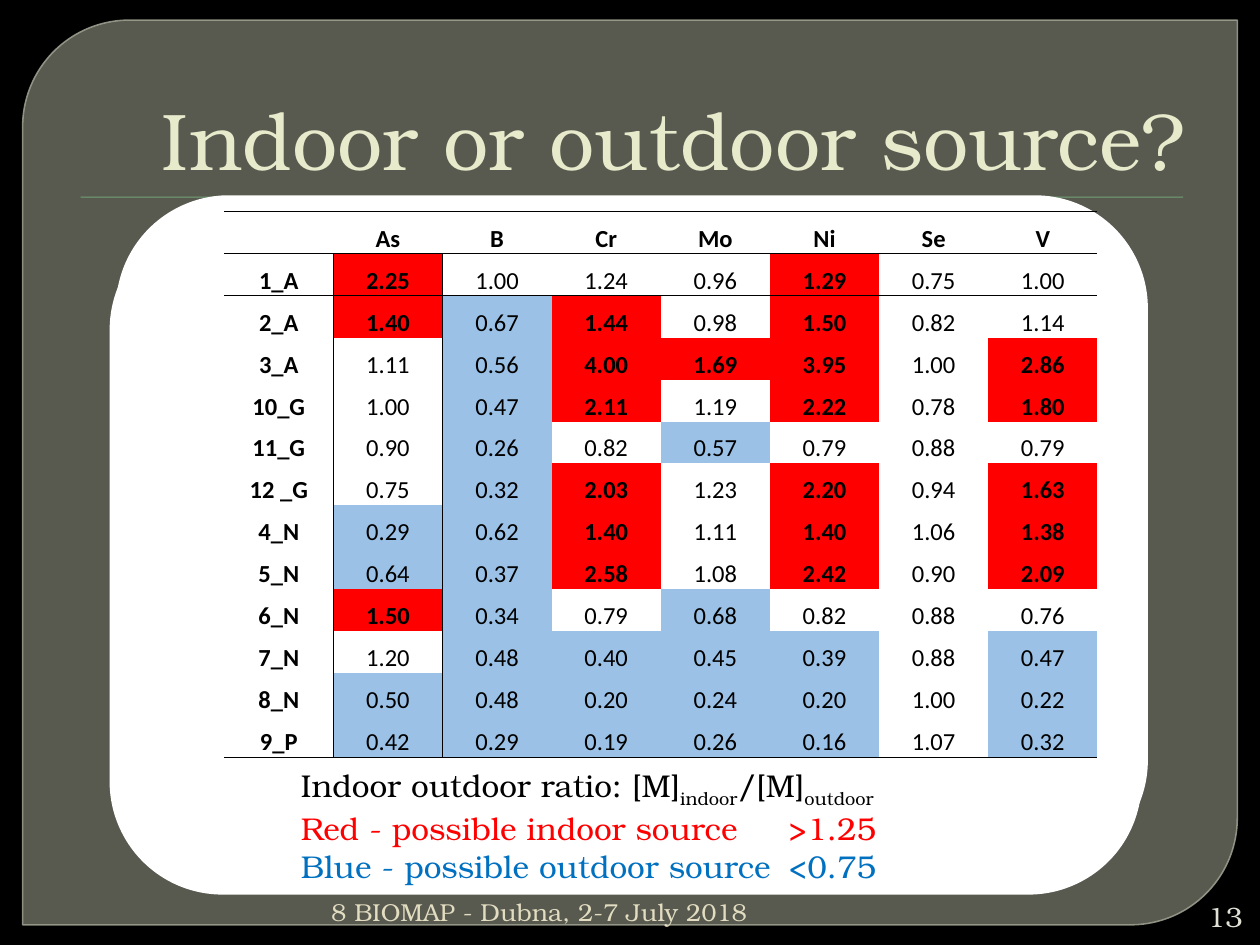
from lxml import etree
from pptx import Presentation
from pptx.dml.color import RGBColor
from pptx.enum.shapes import MSO_SHAPE as SHAPE
from pptx.enum.text import MSO_ANCHOR as ANCHOR, PP_ALIGN as ALIGN
from pptx.oxml.ns import qn
from pptx.util import Inches, Pt

BLACK = RGBColor(0x00, 0x00, 0x00)
WHITE = RGBColor(0xFF, 0xFF, 0xFF)
FRAME_FILL = RGBColor(0x88, 0x8B, 0x7B)
FRAME_LINE = RGBColor(0x9D, 0xA0, 0x90)
GREEN = RGBColor(0x72, 0xA3, 0x76)
CREAM = RGBColor(0xE7, 0xEA, 0xCB)
NUMBER_GREY = RGBColor(0xE0, 0xE0, 0xD4)
FOOTER_SAND = RGBColor(0xE2, 0xDC, 0xC1)
RED = RGBColor(0xFF, 0x00, 0x00)
LIGHT_BLUE = RGBColor(0x9B, 0xC2, 0xE6)
BLUE = RGBColor(0x00, 0x70, 0xC0)
SERIF = "TeX Gyre Bonum"
INDOOR_LIMIT, OUTDOOR_LIMIT = 1.25, 0.75

ELEMENTS = ["As", "B", "Cr", "Mo", "Ni", "Se", "V"]
RATIOS = {
    "1_A": [2.25, 1.00, 1.24, 0.96, 1.29, 0.75, 1.00],
    "2_A": [1.40, 0.67, 1.44, 0.98, 1.50, 0.82, 1.14],
    "3_A": [1.11, 0.56, 4.00, 1.69, 3.95, 1.00, 2.86],
    "10_G": [1.00, 0.47, 2.11, 1.19, 2.22, 0.78, 1.80],
    "11_G": [0.90, 0.26, 0.82, 0.57, 0.79, 0.88, 0.79],
    "12 _G": [0.75, 0.32, 2.03, 1.23, 2.20, 0.94, 1.63],
    "4_N": [0.29, 0.62, 1.40, 1.11, 1.40, 1.06, 1.38],
    "5_N": [0.64, 0.37, 2.58, 1.08, 2.42, 0.90, 2.09],
    "6_N": [1.50, 0.34, 0.79, 0.68, 0.82, 0.88, 0.76],
    "7_N": [1.20, 0.48, 0.40, 0.45, 0.39, 0.88, 0.47],
    "8_N": [0.50, 0.48, 0.20, 0.24, 0.20, 1.00, 0.22],
    "9_P": [0.42, 0.29, 0.19, 0.26, 0.16, 1.07, 0.32],
}

prs = Presentation()
prs.slide_width, prs.slide_height = Inches(10), Inches(7.5)
slide = prs.slides.add_slide(prs.slide_layouts[6])
slide.background.fill.solid()
slide.background.fill.fore_color.rgb = BLACK


def add_panel(kind, left, top, width, height, color):
    panel = slide.shapes.add_shape(
        kind, Inches(left), Inches(top), Inches(width), Inches(height))
    panel.shadow.inherit = False
    panel.fill.solid()
    panel.fill.fore_color.rgb = color
    panel.line.fill.background()
    return panel


def add_text(left, top, width, height, lines, size, color, align, anchor=ANCHOR.TOP):
    frame = slide.shapes.add_textbox(
        Inches(left), Inches(top), Inches(width), Inches(height)).text_frame
    frame.word_wrap = True
    frame.vertical_anchor = anchor
    frame.text = "\n".join(lines)
    for line in frame.paragraphs:
        line.alignment = align
        line.font.name, line.font.size = SERIF, Pt(size)
        line.font.color.rgb = color
    return frame


# Backdrop: translucent frame, title rule, two white panels
backdrop = add_panel(SHAPE.ROUND_2_DIAG_RECTANGLE, 0.18, 0.16, 9.64, 7.18, FRAME_FILL)
backdrop.adjustments[0], backdrop.adjustments[1] = 0.118, 0
backdrop.line.color.rgb = FRAME_LINE
backdrop.line.width = Pt(0.87)
for paint, opacity in ((backdrop.fill, 65000), (backdrop.line.fill, 88000)):
    color_xml = paint.fore_color._xFill.find(qn("a:srgbClr"))
    etree.SubElement(color_xml, qn("a:alpha"), val=str(opacity))
add_panel(SHAPE.RECTANGLE, 0.64, 1.56, 8.75, 0.01, GREEN)
for left, top in ((0.87, 1.72), (0.92, 1.55)):
    add_panel(SHAPE.ROUNDED_RECTANGLE, left, top, 8.19, 5.38, WHITE)

# Title, slide number, footer
add_text(0.5, 0.28, 9, 1.25, ["Indoor or outdoor source?"], 46, CREAM,
         ALIGN.RIGHT, ANCHOR.BOTTOM)
add_text(9.45, 7.12, 0.51, 0.3, ["13"], 16, NUMBER_GREY, ALIGN.RIGHT, ANCHOR.MIDDLE)
add_text(1.42, 7.07, 4.61, 0.3, ["8 BIOMAP - Dubna, 2-7 July 2018"], 14,
         FOOTER_SAND, ALIGN.RIGHT)

# Ratio table: fills follow the indoor and outdoor limits
rows = [["", *ELEMENTS]] + [[site, *values] for site, values in RATIOS.items()]
table = slide.shapes.add_table(len(rows), len(rows[0]), Inches(1.78), Inches(1.68),
                               Inches(6.93), Inches(4.33)).table
table.first_row = table.horz_banding = False
NO_GRID_STYLE = "{2D5ABB26-0587-4C30-8999-92F81FD0307C}"
table._tbl.tblPr.find(qn("a:tableStyleId")).text = NO_GRID_STYLE
last_row = len(rows) - 1
for r, row in enumerate(rows):
    for c, value in enumerate(row):
        cell = table.cell(r, c)
        is_ratio = r > 0 and c > 0
        indoor = is_ratio and value > INDOOR_LIMIT
        outdoor = is_ratio and value < OUTDOOR_LIMIT
        cell.text = f"{value:.2f}" if is_ratio else value
        cell.vertical_anchor = ANCHOR.BOTTOM
        cell.margin_left = cell.margin_right = cell.margin_top = Inches(0.01)
        cell.margin_bottom = 0
        label = cell.text_frame.paragraphs[0]
        label.alignment = ALIGN.CENTER
        label.font.name, label.font.size = "Calibri", Pt(14)
        label.font.bold = indoor or not is_ratio
        label.font.color.rgb = BLACK
        if indoor or outdoor:
            cell.fill.solid()
            cell.fill.fore_color.rgb = RED if indoor else LIGHT_BLUE
        else:
            cell.fill.background()

        # Rules around the header, below the last row, beside the site names
        sides = {"lnL": r > 0 and c == 1, "lnR": r > 0 and c == 0,
                 "lnT": r <= 1, "lnB": r in (0, last_row)}
        for place, side in enumerate(s for s, shown in sides.items() if shown):
            border = etree.Element(qn(f"a:{side}"), w=str(Pt(0.5)))
            solid = etree.SubElement(border, qn("a:solidFill"))
            etree.SubElement(solid, qn("a:srgbClr"), val=str(BLACK))
            cell._tc.get_or_add_tcPr().insert(place, border)

# Legend, with the limits aligned on a tab stop
legend = add_text(2.29, 6.03, 5.98, 1.01,
                  ["", "Red - possible indoor source\t>1.25",
                   "Blue - possible outdoor source\t<0.75"], 18, BLACK, ALIGN.LEFT)
formula, *keys = legend.paragraphs
for text, is_subscript in (("Indoor outdoor ratio: [M]", False), ("indoor", True),
                           ("/[M]", False), ("outdoor", True)):
    part = formula.add_run()
    part.text = text
    if is_subscript:
        part.font._element.set("baseline", "-25000")
for key, color in zip(keys, (RED, BLUE)):
    key.font.color.rgb = color
    tabs = etree.Element(qn("a:tabLst"))
    etree.SubElement(tabs, qn("a:tab"), pos=str(Inches(3.87)), algn="l")
    key._p.pPr.find(qn("a:defRPr")).addprevious(tabs)

prs.save("out.pptx")
